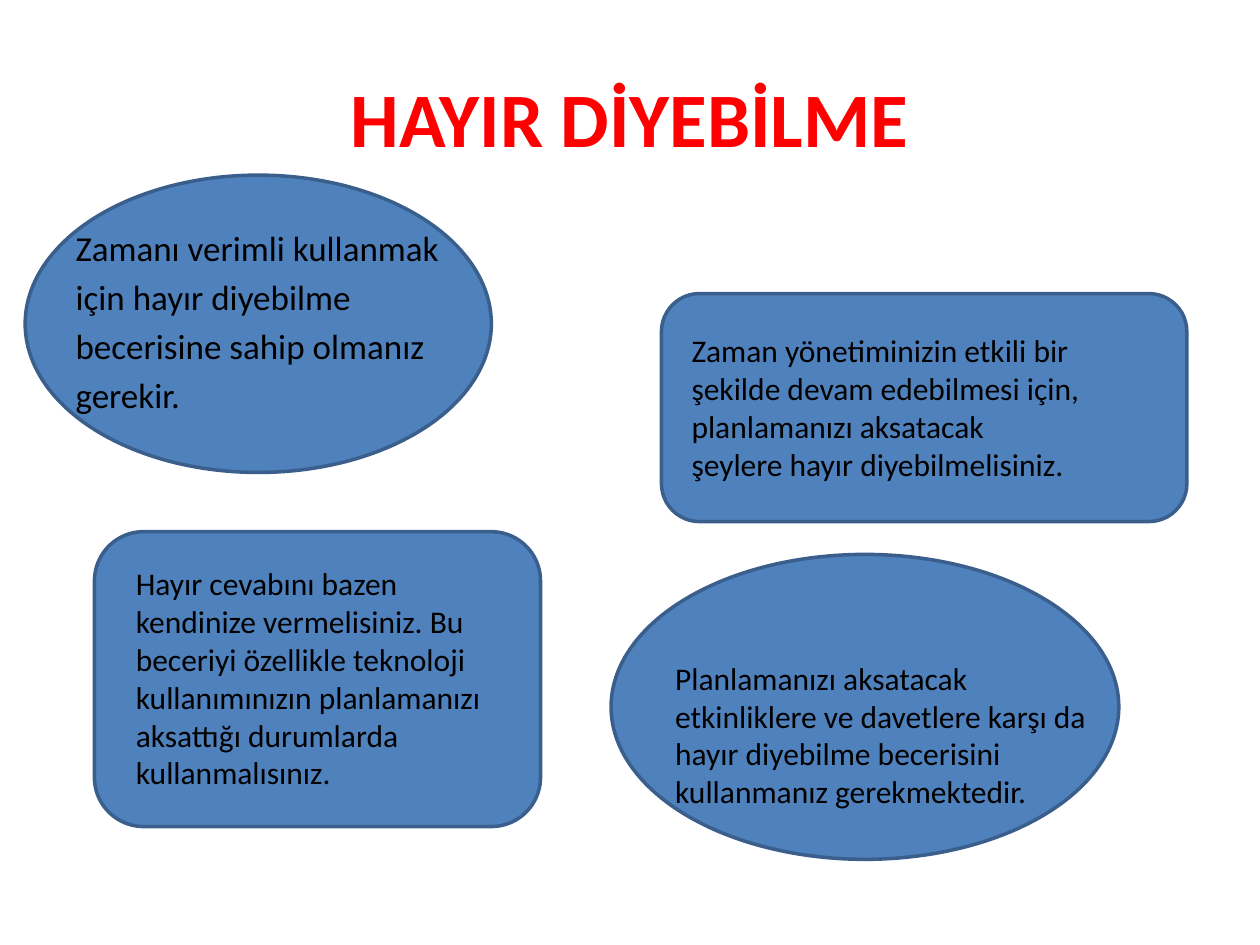
from lxml import etree
from pptx import Presentation
from pptx.dml.color import RGBColor
from pptx.enum.shapes import MSO_SHAPE as SHAPE
from pptx.enum.text import MSO_ANCHOR, MSO_AUTO_SIZE, PP_ALIGN
from pptx.oxml.ns import qn
from pptx.util import Inches, Pt

RED = RGBColor(0xFF, 0x00, 0x00)
BLACK = RGBColor(0x00, 0x00, 0x00)
BLUE = RGBColor(0x4F, 0x81, 0xBD)
DARK_BLUE = RGBColor(0x3A, 0x5F, 0x8C)

# Content: boxes are left, top, width, height in inches
TITLE = "HAYIR DİYEBİLME"
TITLE_BOX = (0.5, 0.3, 9, 1.25)
INTRO = ["Zamanı verimli kullanmak", "için hayır diyebilme",
         "becerisine sahip olmanız", "gerekir."]
INTRO_BOX = (0.5, 1.75, 9, 4.95)

BUBBLES = [
    (SHAPE.OVAL, (4.85, 4.4, 4.03, 2.42)),
    (SHAPE.ROUNDED_RECTANGLE, (0.75, 4.22, 3.54, 2.34)),
    (SHAPE.ROUNDED_RECTANGLE, (5.25, 2.33, 4.17, 1.81)),
    (SHAPE.OVAL, (0.2, 1.39, 3.7, 2.36)),
]
NOTES = [
    ((5.39, 2.58, 5, 1.31),
     ["Zaman yönetiminizin etkili bir", "şekilde devam edebilmesi için,",
      "planlamanızı aksatacak", "şeylere hayır diyebilmelisiniz."]),
    ((0.98, 4.43, 5, 1.92),
     ["Hayır cevabını bazen", "kendinize vermelisiniz. Bu",
      "beceriyi özellikle teknoloji", "kullanımınızın planlamanızı",
      "aksattığı durumlarda", "kullanmalısınız."]),
    ((5.26, 5.18, 5, 1.31),
     ["Planlamanızı aksatacak", "etkinliklere ve davetlere karşı da",
      "hayır diyebilme becerisini", "kullanmanız gerekmektedir."]),
]

TITLE_FONT = {"name": "Calibri", "size": Pt(44), "bold": True}
INTRO_FONT = {"name": "Calibri", "size": Pt(20)}
NOTE_FONT = {"name": "Calibri", "size": Pt(18)}


def place(sp, box):
    for side, value in zip(("left", "top", "width", "height"), box):
        setattr(sp, side, Inches(value))


def write(tf, lines, font, color):
    tf.word_wrap = True
    for i, line in enumerate(lines):
        p = tf.add_paragraph() if i else tf.paragraphs[0]
        r = p.add_run()
        r.text = line
        for key, value in font.items():
            setattr(r.font, key, value)
        r.font.color.rgb = color


prs = Presentation()
prs.slide_width, prs.slide_height = Inches(10), Inches(7.5)
s = prs.slides.add_slide(prs.slide_layouts[1])
title, intro = s.shapes.title, s.placeholders[1]

# Bubbles, stacked behind the placeholders
for kind, box in BUBBLES:
    sp = s.shapes.add_shape(kind, *map(Inches, box))
    sp.shadow.inherit = False
    sp.fill.solid()
    sp.fill.fore_color.rgb = BLUE
    sp.line.color.rgb = DARK_BLUE
    sp.line.width = Pt(2)
    title.element.addprevious(sp.element)

# Title
place(title, TITLE_BOX)
write(title.text_frame, [TITLE], TITLE_FONT, RED)
title.text_frame.vertical_anchor = MSO_ANCHOR.MIDDLE
title.text_frame.paragraphs[0].alignment = PP_ALIGN.CENTER

# Intro list without bullets
place(intro, INTRO_BOX)
write(intro.text_frame, INTRO, INTRO_FONT, BLACK)
for p in intro.text_frame.paragraphs:
    pPr = p._p.get_or_add_pPr()
    pPr.set("marL", "0")
    pPr.set("indent", "0")
    etree.SubElement(pPr, qn("a:buNone"))

# Notes over the other bubbles
for box, lines in NOTES:
    tf = s.shapes.add_textbox(*map(Inches, box)).text_frame
    write(tf, lines, NOTE_FONT, BLACK)
    tf.auto_size = MSO_AUTO_SIZE.SHAPE_TO_FIT_TEXT

prs.save("out.pptx")
